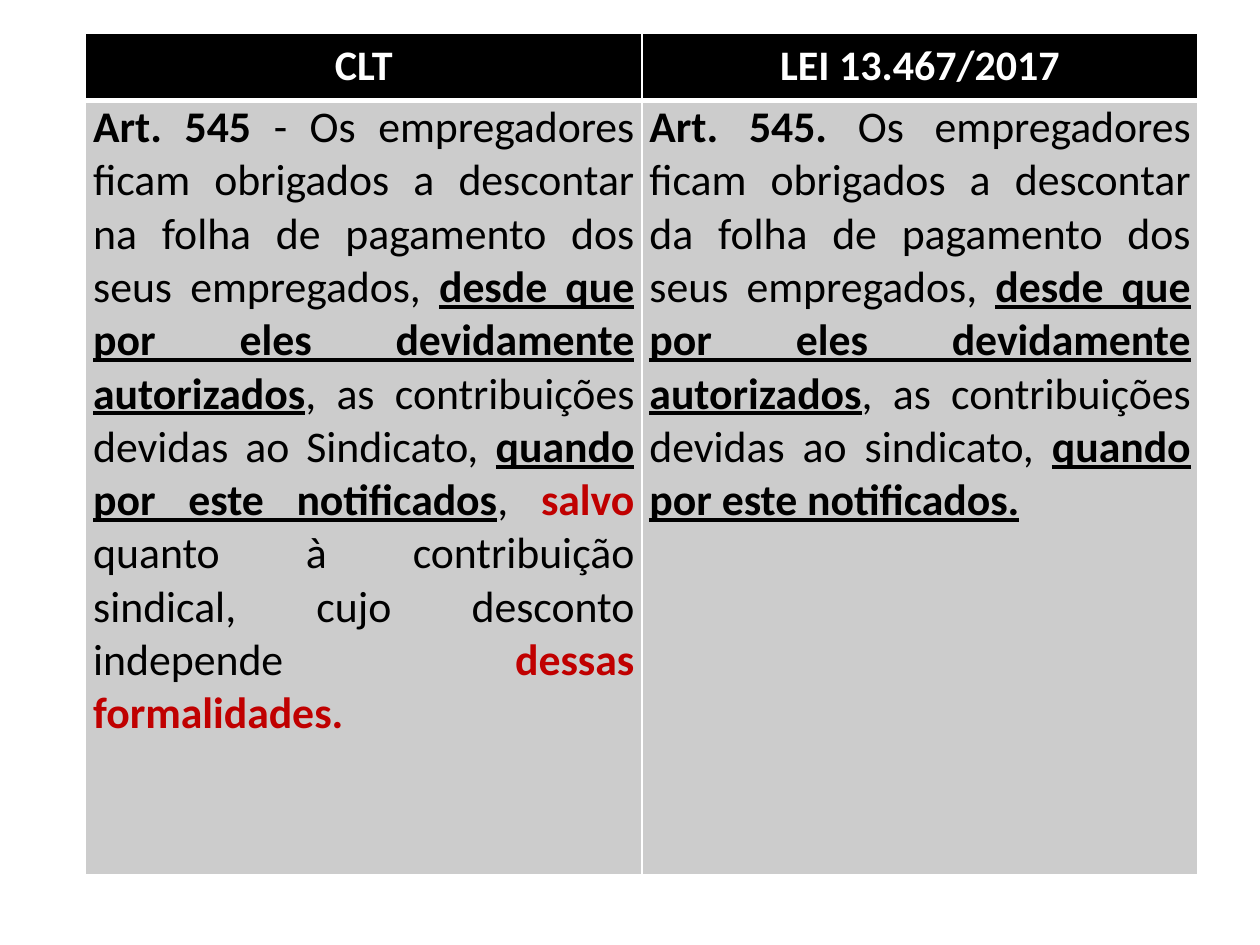
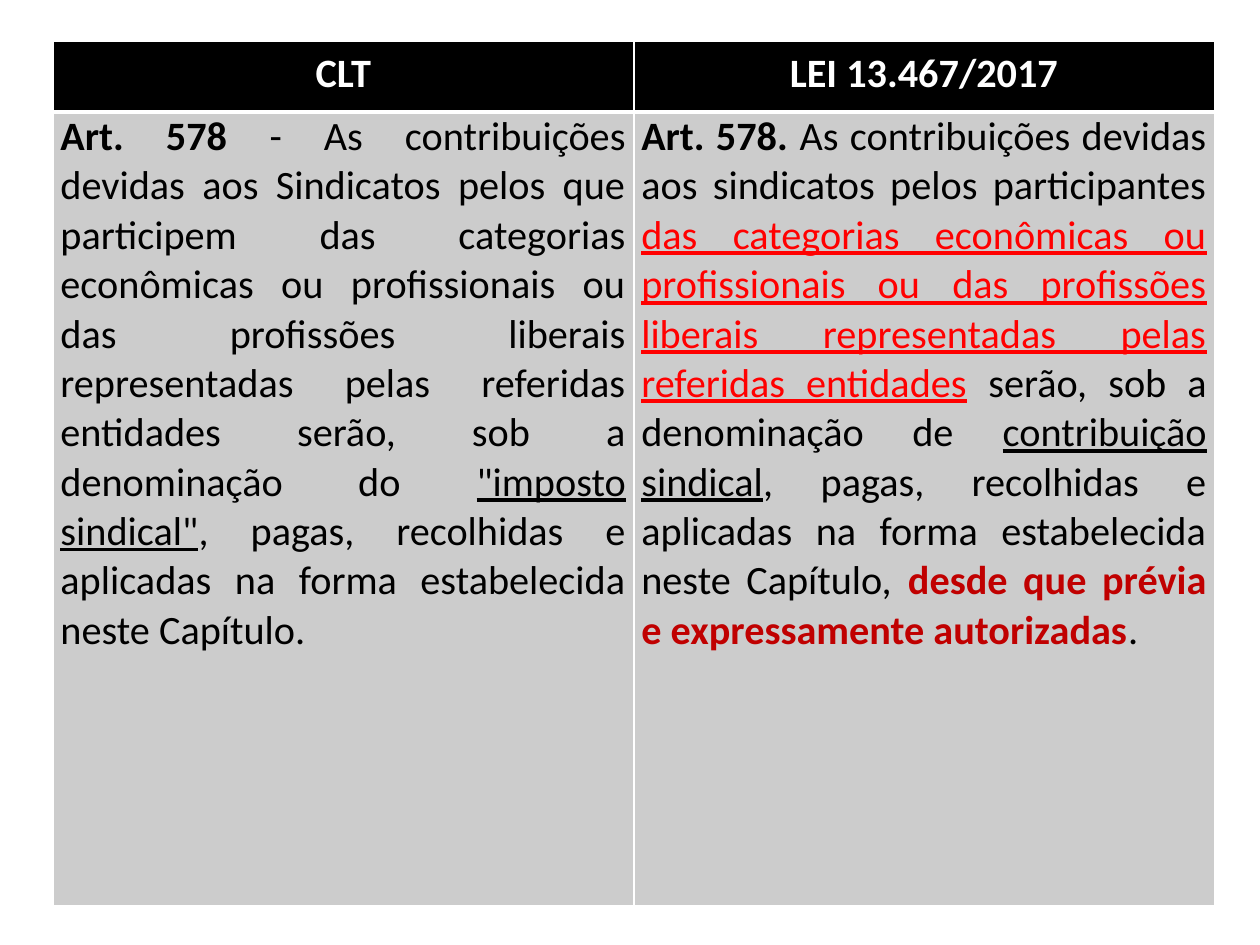
from lxml.etree import SubElement
from pptx import Presentation
from pptx.dml.color import RGBColor
from pptx.enum.text import MSO_ANCHOR, PP_ALIGN as Align
from pptx.oxml.ns import qn
from pptx.util import Inches, Pt

BLACK, WHITE, GREY = "000000", "FFFFFF", "CCCCCC"
DARK_RED, RED = "C00000", "FF0000"
FONT = "Calibri"
THIN, THICK = 1, 3

PLAIN = {}
BOLD = {"bold": True}
UNDERLINED = {"underline": True}
STRESSED = {"bold": True, "underline": True}
CHANGED = {"bold": True, "color": DARK_RED}
NEW = {"underline": True, "color": RED}

HEADINGS = ["CLT", "LEI 13.467/2017"]

ART_545_CLT = [
    ("Art. 545 ", BOLD),
    ("- Os empregadores ficam obrigados a descontar na folha de pagamento "
     "dos seus empregados, ", PLAIN),
    ("desde que por eles devidamente autorizados", STRESSED),
    (", as contribuições devidas ao Sindicato, ", PLAIN),
    ("quando por este notificados", STRESSED),
    (", ", PLAIN),
    ("salvo", CHANGED),
    (" quanto à contribuição sindical, cujo desconto independe ", PLAIN),
    ("dessas formalidades.", CHANGED),
]
ART_545_LAW = [
    ("Art. 545. ", BOLD),
    ("Os empregadores ficam obrigados a descontar da folha de pagamento "
     "dos seus empregados, ", PLAIN),
    ("desde que por eles devidamente autorizados", STRESSED),
    (", as contribuições devidas ao sindicato, ", PLAIN),
    ("quando por este notificados.", STRESSED),
]
ART_578_CLT = [
    ("Art. 578 ", BOLD),
    ("- As contribuições devidas aos Sindicatos pelos que participem das "
     "categorias econômicas ou profissionais ou das profissões liberais "
     "representadas pelas referidas entidades serão, sob a denominação do ", PLAIN),
    ('"imposto sindical"', UNDERLINED),
    (", pagas, recolhidas e aplicadas na forma estabelecida neste Capítulo.", PLAIN),
]
ART_578_LAW = [
    ("Art. 578. ", BOLD),
    ("As contribuições devidas aos sindicatos pelos participantes ", PLAIN),
    ("das categorias econômicas ou profissionais ou das profissões liberais "
     "representadas pelas referidas entidades", NEW),
    (" serão, sob a denominação de ", PLAIN),
    ("contribuição sindical", UNDERLINED),
    (", pagas, recolhidas e aplicadas na forma estabelecida neste Capítulo, ", PLAIN),
    ("desde que prévia e expressamente autorizadas", CHANGED),
    (".", PLAIN),
]


def rgb(value):
    return RGBColor.from_string(value)


class Deck:
    def __init__(self):
        self.prs = Presentation()
        self.prs.slide_width, self.prs.slide_height = Inches(10), Inches(7.5)
        self.slide = None

    def across(self, percent):
        return round(self.prs.slide_width * percent / 100)

    def down(self, percent):
        return round(self.prs.slide_height * percent / 100)

    def new_slide(self):
        self.slide = self.prs.slides.add_slide(self.prs.slide_layouts[6])

    def run(self, paragraph, text, size, bold=False, underline=False, color=BLACK):
        run = paragraph.add_run()
        run.text = text
        font = run.font
        font.name, font.size = FONT, Pt(size)
        font.bold, font.underline = bold, underline
        font.color.rgb = rgb(color)

    def borders(self, cell, top, bottom):
        properties = cell._tc.get_or_add_tcPr()
        sides = {"lnL": THIN, "lnR": THIN, "lnT": top, "lnB": bottom}
        for position, (side, width) in enumerate(sides.items()):
            line = SubElement(properties, qn(f"a:{side}"), w=str(Pt(width)))
            fill = SubElement(line, qn("a:solidFill"))
            SubElement(fill, qn("a:srgbClr"), val=WHITE)
            properties.insert(position, line)

    def cell(self, cell, runs, size, align, fill, top, bottom, spacing=None):
        cell.margin_left = cell.margin_right = Inches(0.06)
        cell.margin_top = cell.margin_bottom = 0
        cell.vertical_anchor = MSO_ANCHOR.TOP
        cell.fill.solid()
        cell.fill.fore_color.rgb = rgb(fill)
        self.borders(cell, top, bottom)
        paragraph = cell.text_frame.paragraphs[0]
        paragraph.alignment = align
        if spacing:
            paragraph.line_spacing = spacing
        for text, style in runs:
            self.run(paragraph, text, size, **style)

    def comparison(self, left, top, width, row_heights, articles, heading_size, body_size):
        heights = [self.down(height) for height in row_heights]
        table = self.slide.shapes.add_table(
            len(heights), len(HEADINGS), self.across(left), self.down(top),
            self.across(width), sum(heights)).table
        for row, height in zip(table.rows, heights):
            row.height = height
        for column, (heading, article) in enumerate(zip(HEADINGS, articles)):
            self.cell(table.cell(0, column), [(heading, {"bold": True, "color": WHITE})],
                      heading_size, Align.CENTER, BLACK, THIN, THICK, spacing=1.15)
            self.cell(table.cell(1, column), article,
                      body_size, Align.JUSTIFY, GREY, THICK, THIN)


def main():
    deck = Deck()
    deck.new_slide()
    deck.comparison(6.8, 3.47, 88.3, [7.2, 81.87], [ART_545_CLT, ART_545_LAW], 24, 25)
    deck.new_slide()
    deck.comparison(4.2, 4.4, 92.2, [7.47, 84], [ART_578_CLT, ART_578_LAW], 23, 23)
    deck.prs.save("out.pptx")


if __name__ == "__main__":
    main()
